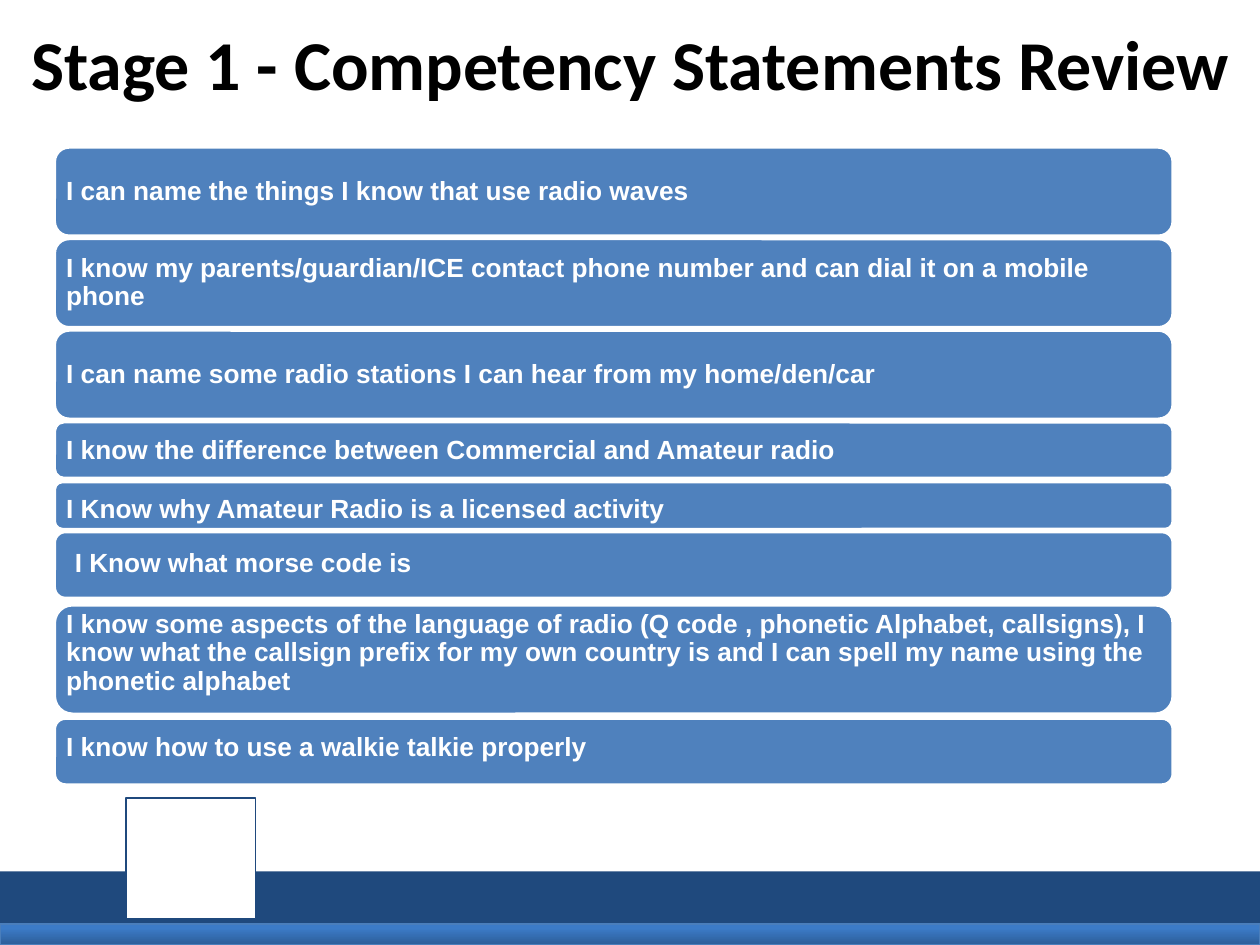
"""Build the Stage 1 competency review slide."""
from typing import NamedTuple, Optional

from pptx import Presentation
from pptx.dml.color import RGBColor
from pptx.enum.shapes import MSO_SHAPE as Form
from pptx.enum.text import MSO_ANCHOR as Anchor, PP_ALIGN as Align
from pptx.util import Pt

NAVY, BLUE, WHITE, BLACK = "1F497D", "4F81BD", "FFFFFF", "000000"
LEFT, WIDTH = 31, 639.4
TITLE = {"name": "Calibri", "size": Pt(40), "bold": True}
BODY = {"name": "Arial", "size": Pt(15), "bold": True}


class Box(NamedTuple):
    left: float
    top: float
    width: float
    height: float


class Claim(NamedTuple):
    text: str
    top: float
    height: float
    shift: float = 0
    indent: float = 2.3


CLAIMS = [
    Claim("I can name the things I know that use radio waves", 84, 51),
    Claim("I know my parents/guardian/ICE contact phone number and can "
          "dial it on a mobile phone", 136.3, 51),
    Claim("I can name some radio stations I can hear from my home/den/car", 188.6, 51),
    Claim("I know the difference between Commercial and Amateur radio", 241, 32.4, 0.8),
    Claim("I Know why Amateur Radio is a licensed activity", 275.2, 27.4, 2.6),
    Claim("I know some aspects of the language of radio (Q code , phonetic "
          "Alphabet, callsigns), I know what the callsign prefix for my own "
          "country is and I can spell my name using the phonetic alphabet",
          345.6, 62.6, -3.6),
    Claim("I know how to use a walkie talkie properly", 410.4, 38.2, -2.2),
    Claim("I Know what morse code is", 303.8, 38.2, -0.4, 7.2),
]


def tint(code: str) -> RGBColor:
    return RGBColor.from_string(code)


def place(box: Box) -> list[Pt]:
    return [Pt(side) for side in box]


def draw(slide, form: Form, box: Box, fill: str,
         edge: Optional[str] = None, weight: float = 0.75):
    shape = slide.shapes.add_shape(form, *place(box))
    shape.shadow.inherit = False
    shape.fill.solid()
    shape.fill.fore_color.rgb = tint(fill)
    if edge:
        shape.line.color.rgb = tint(edge)
        shape.line.width = Pt(weight)
    else:
        shape.line.fill.background()
    return shape


def write(slide, box: Box, text: str, style: dict, color: str,
          align: Align, inset: tuple[float, float], space: float) -> None:
    frame = slide.shapes.add_textbox(*place(box)).text_frame
    side, edge = map(Pt, inset)
    layout = {"word_wrap": True, "vertical_anchor": Anchor.MIDDLE,
              "margin_left": side, "margin_right": side,
              "margin_top": edge, "margin_bottom": edge}
    for key, value in layout.items():
        setattr(frame, key, value)
    para = frame.paragraphs[0]
    para.alignment, para.line_spacing = align, space
    run = para.add_run()
    run.text = text
    for key, value in style.items():
        setattr(run.font, key, value)
    run.font.color.rgb = tint(color)


def footer(slide) -> None:
    draw(slide, Form.RECTANGLE, Box(0, 498, 720, 30), NAVY)
    strip = draw(slide, Form.RECTANGLE, Box(0, 528, 720, 12), BLUE, "4A7EBB")
    strip.fill.gradient()
    strip.fill.gradient_angle = 270
    ends = [("3C7BC7", 0.2), ("2C5D98", 1)]
    for stop, (code, spot) in zip(strip.fill.gradient_stops, ends):
        stop.color.rgb, stop.position = tint(code), spot
    draw(slide, Form.RECTANGLE, Box(72, 456, 74, 69), WHITE, NAVY)


def panel(slide, claim: Claim) -> None:
    box = Box(LEFT, claim.top, WIDTH, claim.height)
    draw(slide, Form.ROUNDED_RECTANGLE, box, BLUE, WHITE, 2)
    label = Box(LEFT + claim.indent, claim.top + 2.5 + claim.shift,
                WIDTH - 4.4, claim.height - 5)
    write(slide, label, claim.text, BODY, WHITE, Align.LEFT, (4.5, 4.5), 0.9)


def main() -> None:
    deck = Presentation()
    deck.slide_width, deck.slide_height = Pt(720), Pt(540)
    slide = deck.slides.add_slide(deck.slide_layouts[6])
    footer(slide)
    write(slide, Box(0, 0, 720, 72), "Stage 1 - Competency Statements Review",
          TITLE, BLACK, Align.CENTER, (7.2, 3.6), 1)
    for claim in CLAIMS:
        panel(slide, claim)
    deck.save("out.pptx")


if __name__ == "__main__":
    main()
